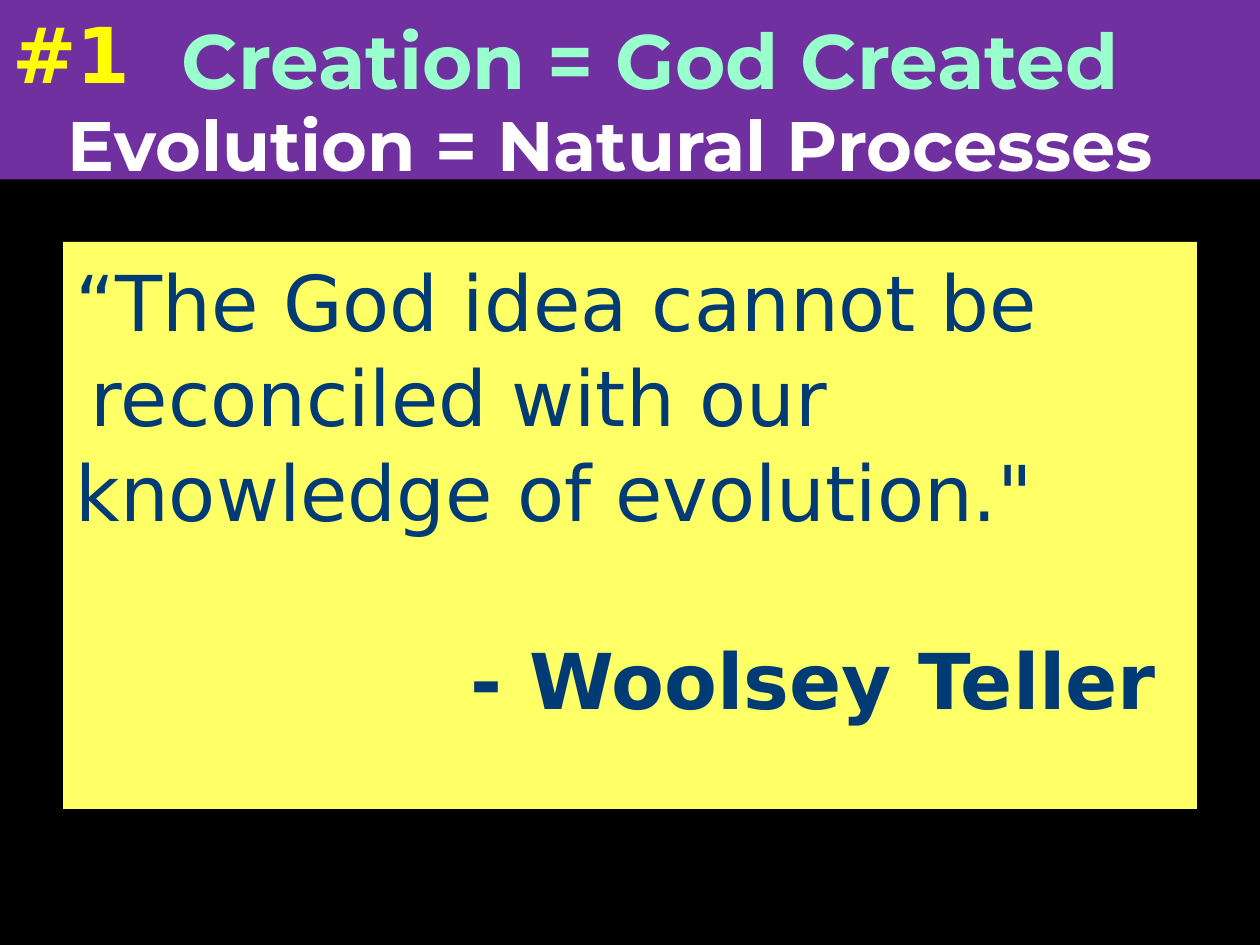
import pptx
import pptx.dml.color
import pptx.enum.shapes
import pptx.enum.text
import pptx.util
from lxml import etree

WIDTH, HEIGHT = pptx.util.Inches(10), pptx.util.Inches(7.5)
ALIGN = pptx.enum.text.PP_ALIGN
ANCHOR = pptx.enum.text.MSO_ANCHOR


def color(value):
    return pptx.dml.color.RGBColor.from_string(value)


def paint(target, value):
    target.fill.solid()
    target.fill.fore_color.rgb = color(value)


def place(shape, box):
    left, top, width, height = box
    shape.left, shape.width = int(left * WIDTH), int(width * WIDTH)
    shape.top, shape.height = int(top * HEIGHT), int(height * HEIGHT)


def prepare(shape, anchor=ANCHOR.TOP):
    frame = shape.text_frame
    frame.word_wrap = True
    frame.auto_size = pptx.enum.text.MSO_AUTO_SIZE.NONE
    frame.vertical_anchor = anchor
    return frame


def write(paragraph, text, font="Montserrat", size=44, fill="FFFFFF", bold=True,
          align=ALIGN.LEFT, before=0, spacing=1.0, margin=0, indent=0):
    run = paragraph.add_run()
    run.text = text
    run.font.name, run.font.size, run.font.bold = font, pptx.util.Pt(size), bold
    run.font.color.rgb = color(fill)
    paragraph.alignment = align
    paragraph.space_before = pptx.util.Pt(before)
    paragraph.line_spacing = spacing
    properties = paragraph._p.get_or_add_pPr()
    properties.set("marL", str(pptx.util.Inches(margin)))
    properties.set("indent", str(pptx.util.Inches(indent)))
    etree.SubElement(properties, pptx.oxml.ns.qn("a:buNone"))


def add_label(slide, box, text, **text_format):
    label = slide.shapes.add_textbox(0, 0, 0, 0)
    place(label, box)
    write(prepare(label).paragraphs[0], text, **text_format)


def build_header(slide, box):
    left, top, width, height = box
    band = slide.shapes.add_shape(pptx.enum.shapes.MSO_SHAPE.RECTANGLE, 0, 0, 0, 0)
    place(band, box)
    band.shadow.inherit = False
    paint(band, "7030A0")
    band.line.fill.background()
    title = slide.shapes.title
    title._element.addprevious(band._element)
    place(title, (left + width * 0.05, top, width * 0.95, height * 0.65))
    write(prepare(title, ANCHOR.MIDDLE).paragraphs[0], "Creation = God Created ",
          fill="99FFCC", align=ALIGN.CENTER)
    add_label(slide, (left, top + height * 0.53, width, height * 0.47),
              "Evolution = Natural Processes", size=40, margin=0.44)
    add_label(slide, (left, top, width * 0.12, height * 0.59), "#1",
              font="DejaVu Sans", fill="FFFF00")


def build_quote(slide, box):
    body = slide.placeholders[1]
    place(body, box)
    paint(body, "FFFF66")
    frame = prepare(body)
    frame.margin_top = pptx.util.Inches(0.08)
    style = dict(font="DejaVu Sans", fill="003B76", spacing=1.03)
    lines = [
        ("“The God idea cannot be reconciled with our", dict(bold=False, margin=0.12, indent=-0.12)),
        ("knowledge of evolution.\"", dict(bold=False)),
        ("- Woolsey Teller", dict(align=ALIGN.RIGHT, before=53)),
    ]
    frame.margin_right = pptx.util.Inches(0.32)
    for number, (text, text_format) in enumerate(lines):
        paragraph = frame.add_paragraph() if number else frame.paragraphs[0]
        write(paragraph, text, **style, **text_format)


def main():
    presentation = pptx.Presentation()
    presentation.slide_width, presentation.slide_height = WIDTH, HEIGHT
    slide = presentation.slides.add_slide(presentation.slide_layouts[1])
    paint(slide.background, "000000")
    build_header(slide, (0, 0, 1, 0.19))
    build_quote(slide, (0.05, 0.256, 0.9, 0.6))
    presentation.save("out.pptx")


if __name__ == "__main__":
    main()
